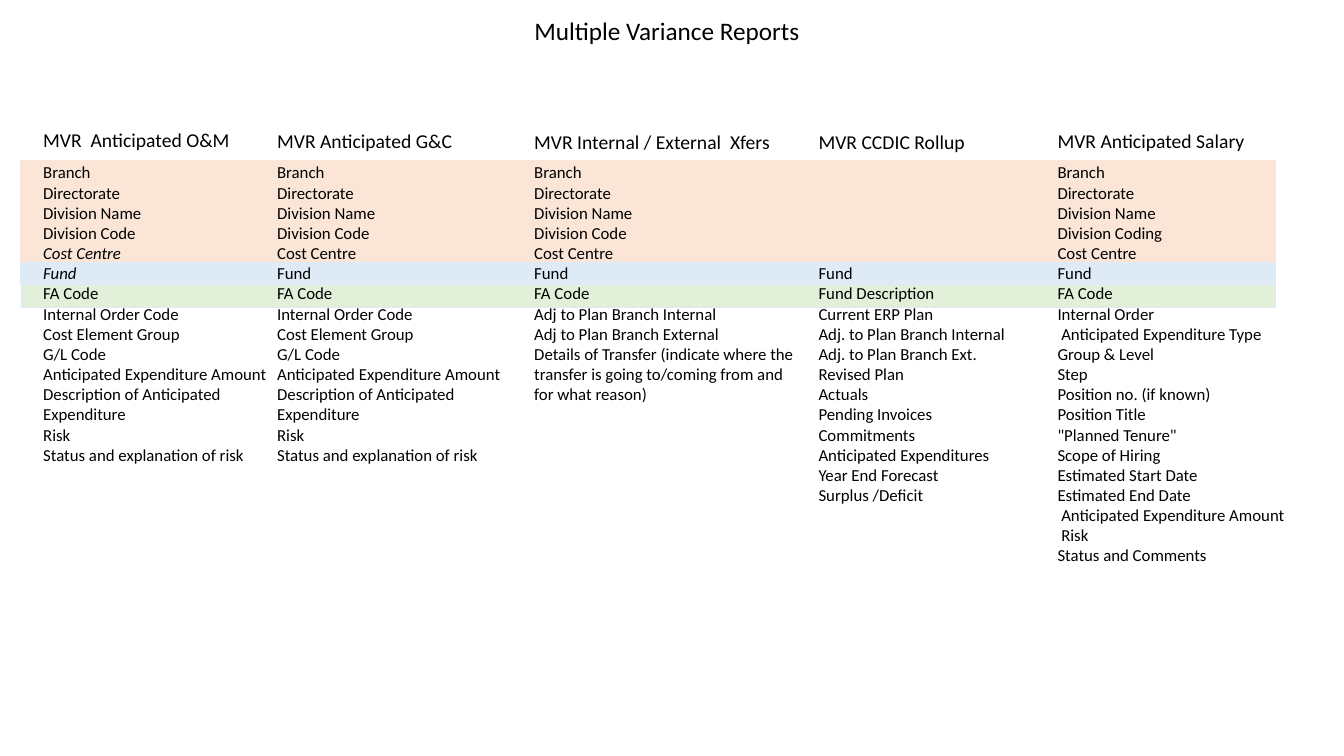
from pptx import Presentation
from pptx.dml.color import RGBColor
from pptx.enum.shapes import MSO_SHAPE
from pptx.enum.text import MSO_ANCHOR, MSO_AUTO_SIZE, PP_ALIGN
from pptx.util import Inches, Pt

RECTANGLE = MSO_SHAPE.RECTANGLE
TOP = MSO_ANCHOR.TOP
LEFT = PP_ALIGN.LEFT
GROW = MSO_AUTO_SIZE.SHAPE_TO_FIT_TEXT

BLACK = RGBColor(0x00, 0x00, 0x00)
GREEN = RGBColor(0xE2, 0xF0, 0xD9)
ORANGE = RGBColor(0xFB, 0xE5, 0xD6)
BLUE = RGBColor(0xDE, 0xEB, 0xF7)
FONT = "Calibri"

# Content
TITLE = "Multiple Variance Reports"

# Bands behind shared fields: left, top, width, height, fill, outline
BANDS = [
    (0.22, 2.82, 12.43, 0.23, GREEN, BLUE),
    (0.21, 1.59, 12.44, 1.00, ORANGE, ORANGE),
    (0.21, 2.61, 12.44, 0.21, BLUE, BLUE),
]

ORGANISATION = ["Branch", "Directorate", "Division Name", "Division Code", "Cost Centre"]
FUNDING = ["Fund", "FA Code"]
EXPENDITURE = [
    "Internal Order Code", "Cost Element Group", "G/L Code",
    "Anticipated Expenditure Amount", "Description of Anticipated Expenditure",
    "Risk", "Status and explanation of risk",
]
TRANSFERS = [
    "Adj to Plan Branch Internal", "Adj to Plan Branch External",
    "Details of Transfer (indicate where the transfer is going to/coming from "
    "and for what reason)",
]
ROLLUP = [
    "Fund", "Fund Description", "Current ERP Plan", "Adj. to Plan Branch Internal",
    "Adj. to Plan Branch Ext.", "Revised Plan", "Actuals", "Pending Invoices",
    "Commitments", "Anticipated Expenditures", "Year End Forecast", "Surplus /Deficit",
]
SALARY = [
    "Branch", "Directorate", "Division Name", "Division Coding", "Cost Centre",
    "Fund", "FA Code", "Internal Order", " Anticipated Expenditure Type",
    "Group & Level", "Step", "Position no. (if known)", "Position Title",
    '"Planned Tenure"', "Scope of Hiring", "Estimated Start Date",
    "Estimated End Date", " Anticipated Expenditure Amount", " Risk",
    "Status and Comments",
]

# heading, left, heading top, heading width, heading wraps,
# fields, first row, list width, list height, italic fields
REPORTS = [
    ("MVR  Anticipated O&M", 0.33, 1.22, 2.91, True,
     ORGANISATION + FUNDING + EXPENDITURE, 0, 2.65, 3.13, ("Cost Centre", "Fund")),
    ("MVR Anticipated G&C", 2.65, 1.23, 1.98, True,
     ORGANISATION + FUNDING + EXPENDITURE, 0, 2.71, 3.13, ()),
    ("MVR Internal / External  Xfers", 5.2, 1.24, 2.56, False,
     ORGANISATION + FUNDING + TRANSFERS, 0, 2.88, 2.52, ()),
    ("MVR CCDIC Rollup", 8.02, 1.24, 1.67, False, ROLLUP, 5, 2.12, 2.52, ()),
    ("MVR Anticipated Salary", 10.39, 1.23, 2.08, False, SALARY, 0, 2.65, 4.14, ()),
]
LIST_TOP, ROW_HEIGHT, HEADING_HEIGHT = 1.56, 0.2, 0.34


def fill_text(frame, lines, size, wrap, italic_lines=()):
    frame.word_wrap = wrap
    frame.auto_size = GROW
    frame.vertical_anchor = TOP
    frame.text = "\n".join(lines)
    for paragraph in frame.paragraphs:
        paragraph.alignment = LEFT
        font = paragraph.font
        font.name, font.size, font.color.rgb = FONT, Pt(size), BLACK
        if paragraph.text in italic_lines:
            font.italic = True


def add_text(slide, box, lines, size, wrap=True, italic_lines=()):
    textbox = slide.shapes.add_textbox(*map(Inches, box))
    fill_text(textbox.text_frame, lines, size, wrap, italic_lines)


def main():
    prs = Presentation()
    prs.slide_width, prs.slide_height = Inches(13.33), Inches(7.5)
    slide = prs.slides.add_slide(prs.slide_layouts[5])

    # Title
    title = slide.shapes.title
    title.left, title.top = Inches(5.2), Inches(0.1)
    title.width, title.height = Inches(2.86), Inches(0.4)
    fill_text(title.text_frame, [TITLE], 18, False)

    # Colour bands
    for *box, fill, outline in BANDS:
        band = slide.shapes.add_shape(RECTANGLE, *map(Inches, box))
        band.shadow.inherit = False
        band.fill.solid()
        band.fill.fore_color.rgb = fill
        band.line.color.rgb = outline
        band.line.width = Pt(1)

    # Report columns: field list and heading
    for (heading, left, heading_top, heading_width, wraps,
         fields, first_row, width, height, italic_fields) in REPORTS:
        list_top = LIST_TOP + first_row * ROW_HEIGHT
        add_text(slide, (left, list_top, width, height), fields, 12,
                 italic_lines=italic_fields)
        add_text(slide, (left, heading_top, heading_width, HEADING_HEIGHT),
                 [heading], 14, wraps)

    prs.save("out.pptx")


if __name__ == "__main__":
    main()
